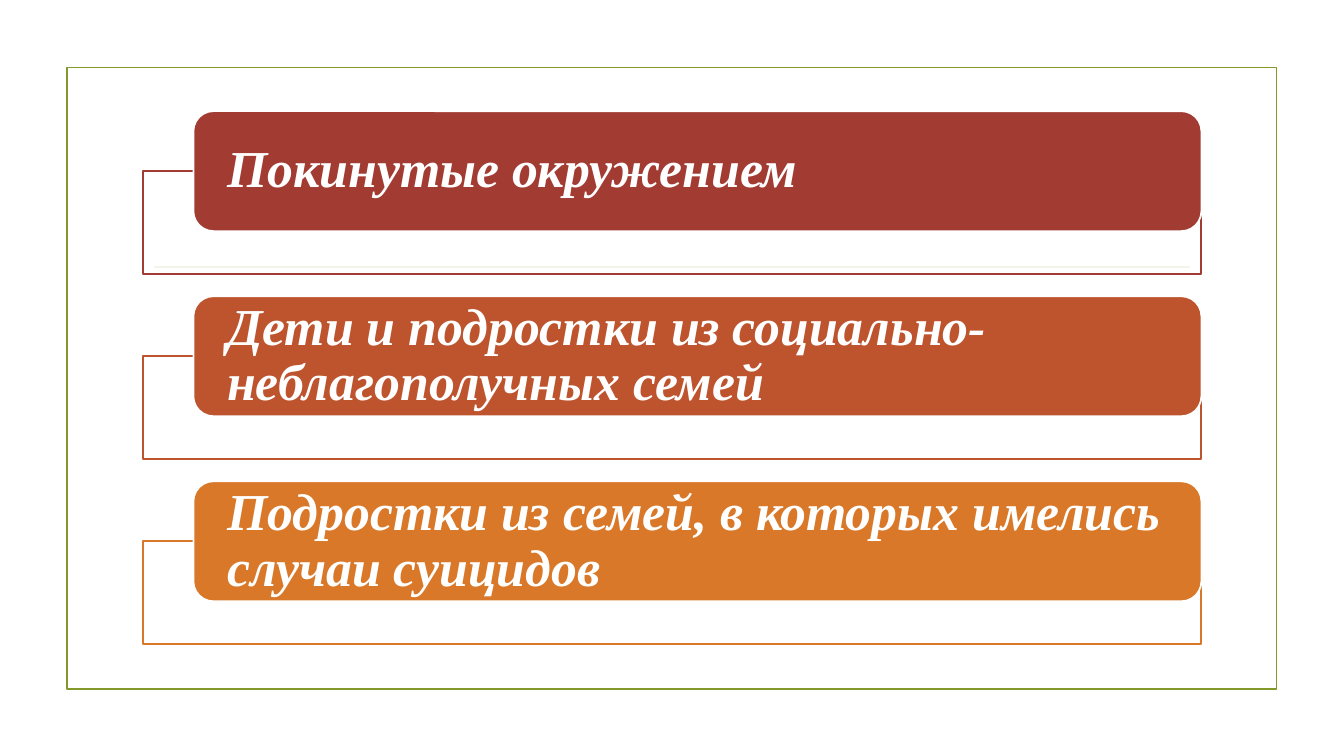
"""Build a slide listing three risk groups as banners over outlined panels."""
from dataclasses import dataclass

from lxml import etree
from pptx import Presentation
from pptx.dml.color import RGBColor
from pptx.enum import shapes, text
from pptx.oxml import ns
from pptx.util import Pt


@dataclass
class RiskGroup:
    """A banner's wording and colour."""
    wording: str
    color: str


RISK_GROUPS = [
    RiskGroup("Покинутые окружением", "A23C33"),
    RiskGroup("Дети и подростки из социально-неблагополучных семей", "BD542E"),
    RiskGroup("Подростки из семей, в которых имелись случаи суицидов", "D97828"),
]
WHITE = "FFFFFF"
GREEN = "83992A"
LINE_WIDTH = 1.25
BANNER_TOP = 79.4
BANNER_STEP = 132.2
PANEL_DROP = 42.8


def rgb(color: str) -> RGBColor:
    """Turn a hex string into a colour."""
    return RGBColor.from_string(color)


def add_box(slide, kind, left: float, top: float, width: float, height: float,
            line: str, fill: str | None = None):
    """Add a shape outlined in one colour, filled if a fill is given."""
    shape = slide.shapes.add_shape(kind, Pt(left), Pt(top), Pt(width), Pt(height))
    shape.shadow.inherit = False
    shape.line.color.rgb = rgb(line)
    shape.line.width = Pt(LINE_WIDTH)
    if fill is None:
        shape.fill.background()
    else:
        shape.fill.solid()
        shape.fill.fore_color.rgb = rgb(fill)
    return shape


def set_opacity(shape, percent: int) -> None:
    """Make the solid fill of a shape partly transparent."""
    color = shape.fill._xPr.find(ns.qn("a:solidFill"))[0]
    etree.SubElement(color, ns.qn("a:alpha"), val=str(percent * 1000))


def add_rule(slide, left: float, right: float, top: float, color: str) -> None:
    """Add a horizontal line without a shadow."""
    rule = slide.shapes.add_connector(
        shapes.MSO_CONNECTOR.STRAIGHT, Pt(left), Pt(top), Pt(right), Pt(top))
    rule.line.color.rgb = rgb(color)
    rule.line.width = Pt(LINE_WIDTH)
    etree.SubElement(rule._element.spPr, ns.qn("a:effectLst"))


def write_text(shape, wording: str, *, size: float, color: str, font: str,
               bold: bool, italic: bool, side_margin: float, spacing: float) -> None:
    """Write left-aligned, vertically centred text into a shape."""
    frame = shape.text_frame
    frame.word_wrap = True
    frame.vertical_anchor = text.MSO_ANCHOR.MIDDLE
    frame.margin_left = frame.margin_right = Pt(side_margin)
    frame.margin_top = frame.margin_bottom = Pt(0)
    paragraph = frame.paragraphs[0]
    paragraph.alignment = text.PP_ALIGN.LEFT
    paragraph.line_spacing = spacing
    run = paragraph.add_run()
    run.text = wording
    run.font.name = font
    run.font.size = Pt(size)
    run.font.bold = bold
    run.font.italic = italic
    run.font.color.rgb = rgb(color)


def add_risk_group(slide, group: RiskGroup, top: float) -> None:
    """Draw one panel with its banner on top."""
    panel = add_box(slide, shapes.MSO_SHAPE.RECTANGLE, 102.2, top + PANEL_DROP,
                    756, 73.4, group.color, WHITE)
    set_opacity(panel, 90)
    banner = add_box(slide, shapes.MSO_SHAPE.ROUNDED_RECTANGLE, 138.2, top,
                     720, 85.7, WHITE, group.color)
    write_text(banner, group.wording, size=37, color=WHITE, font="Times New Roman",
               bold=True, italic=True, side_margin=20, spacing=0.9)


def main() -> None:
    """Build and save the presentation."""
    presentation = Presentation()
    presentation.slide_width = Pt(960)
    presentation.slide_height = Pt(540)
    slide = presentation.slides.add_slide(presentation.slide_layouts[6])
    add_box(slide, shapes.MSO_SHAPE.RECTANGLE, 47.8, 48.2, 864, 444.2, GREEN)
    add_rule(slide, 110.2, 850.3, 190.8, GREEN)
    for index, group in enumerate(RISK_GROUPS):
        add_risk_group(slide, group, BANNER_TOP + index * BANNER_STEP)
    presentation.save("out.pptx")


if __name__ == "__main__":
    main()
